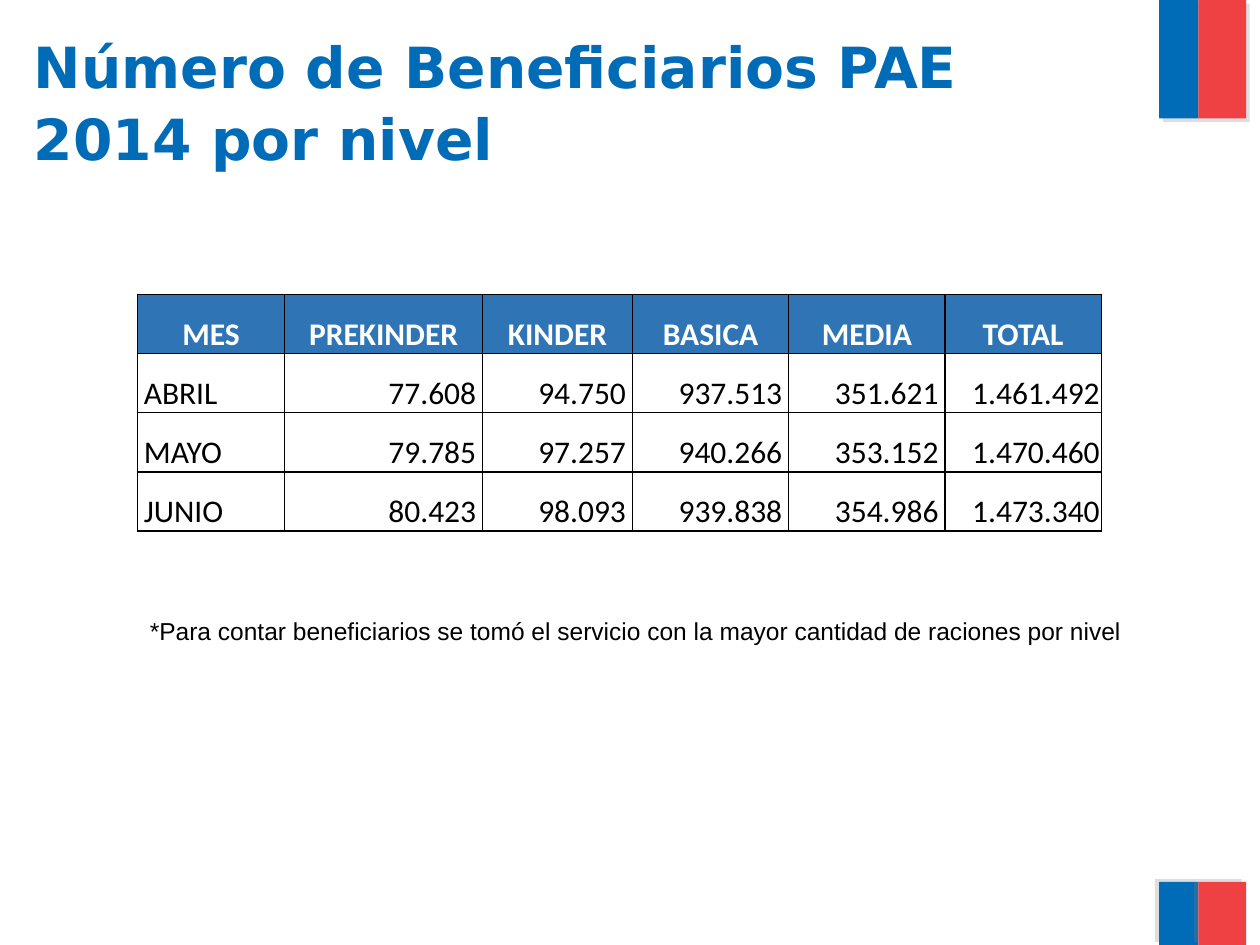
"""Build the slide with PAE beneficiaries by school level."""
from dataclasses import dataclass

from lxml.etree import SubElement
from pptx import Presentation
from pptx.dml.color import RGBColor as Rgb
from pptx.enum.shapes import MSO_SHAPE as Shape
from pptx.enum.text import MSO_ANCHOR as Anchor, MSO_AUTO_SIZE as AutoSize, PP_ALIGN as Align
from pptx.oxml import parse_xml
from pptx.oxml.ns import nsdecls, qn
from pptx.util import Cm, Pt


@dataclass(frozen=True)
class Theme:
    blue: str = "006CB7"
    red: str = "EF4144"
    header: str = "2F75B5"
    white: str = "FFFFFF"
    black: str = "000000"
    shadow: str = "808080"
    title_size: float = 32.4
    table_size: float = 18
    note_size: float = 14


theme = Theme()


def add_span(para, text, font, size, color, bold=False):
    span = para.add_run()
    span.text = text
    span.font.name = font
    span.font.size = Pt(size)
    span.font.bold = bold
    span.font.color.rgb = Rgb.from_string(color)


def add_borders(cell):
    properties = cell._tc.get_or_add_tcPr()
    for position, side in enumerate(("a:lnL", "a:lnR", "a:lnT", "a:lnB")):
        line = properties.makeelement(qn(side), {"w": str(Pt(1))})
        fill = SubElement(line, qn("a:solidFill"))
        SubElement(fill, qn("a:srgbClr"), val=theme.black)
        properties.insert(position, line)


deck = Presentation()
deck.slide_width, deck.slide_height = Cm(25.4), Cm(19.05)
page = deck.slides.add_slide(deck.slide_layouts[5])

for top, height, angle in ((0, 2.39, 45), (17.78, 1.27, 215)):
    for left, width, color in ((23.37, 0.79, theme.blue), (24.16, 0.96, theme.red)):
        band = page.shapes.add_shape(Shape.RECTANGLE, Cm(left), Cm(top), Cm(width), Cm(height))
        band.fill.solid()
        band.fill.fore_color.rgb = Rgb.from_string(color)
        band.line.fill.background()
        band.shadow.inherit = False
        band._element.spPr.remove(band._element.spPr.find(qn("a:effectLst")))
        band._element.spPr.append(parse_xml(
            f'<a:effectLst {nsdecls("a")}><a:outerShdw blurRad="0" dist="{Pt(3)}" '
            f'dir="{angle * 60000}" algn="ctr" rotWithShape="0"><a:srgbClr val="{theme.shadow}">'
            '<a:alpha val="25000"/></a:srgbClr></a:outerShdw></a:effectLst>'))

title = page.shapes.title
title.left, title.top, title.width, title.height = Cm(0.43), Cm(0.43), Cm(22.68), Cm(3.18)
title.text_frame.auto_size = AutoSize.NONE
title.text_frame.word_wrap = True
title.text_frame.vertical_anchor = Anchor.MIDDLE
para = title.text_frame.paragraphs[0]
para.alignment = Align.LEFT
para.line_spacing = 1.05
add_span(para, "Número de Beneficiarios PAE 2014 por nivel", "DejaVu Sans",
         theme.title_size, theme.blue, True)

rows = (
    ("MES", "PREKINDER", "KINDER", "BASICA", "MEDIA", "TOTAL"),
    ("ABRIL", "77.608", "94.750", "937.513", "351.621", "1.461.492"),
    ("MAYO", "79.785", "97.257", "940.266", "353.152", "1.470.460"),
    ("JUNIO", "80.423", "98.093", "939.838", "354.986", "1.473.340"),
)
widths = (2.97, 3.99, 3.02, 3.15, 3.15, 3.15)
row_height = 1.19
table = page.shapes.add_table(len(rows), len(widths), Cm(2.77), Cm(5.94),
                              Cm(sum(widths)), Cm(row_height * len(rows))).table
for column, width in zip(table.columns, widths):
    column.width = Cm(width)
for row_index, values in enumerate(rows):
    table.rows[row_index].height = Cm(row_height)
    is_header = row_index == 0
    for column_index, value in enumerate(values):
        cell = table.cell(row_index, column_index)
        is_total = not is_header and column_index == len(widths) - 1
        cell.margin_left = cell.margin_right = Cm(0.03 if is_total else 0.13)
        cell.margin_top = Cm(0.03 if is_total else 0)
        cell.margin_bottom = Cm(0)
        cell.vertical_anchor = Anchor.BOTTOM
        if is_header:
            cell.fill.solid()
            cell.fill.fore_color.rgb = Rgb.from_string(theme.header)
        else:
            cell.fill.background()
        add_borders(cell)
        para = cell.text_frame.paragraphs[0]
        para.alignment = Align.CENTER if is_header else Align.RIGHT if column_index else Align.LEFT
        add_span(para, value, "Calibri", theme.table_size,
                 theme.white if is_header else theme.black, is_header)

note = page.shapes.add_textbox(Cm(2.77), Cm(12.29), Cm(20.65), Cm(0.86))
note.text_frame.word_wrap = True
note.text_frame.auto_size = AutoSize.SHAPE_TO_FIT_TEXT
add_span(note.text_frame.paragraphs[0],
         "*Para contar beneficiarios se tomó el servicio con la mayor cantidad de raciones por nivel",
         "Arial", theme.note_size, theme.black)

deck.save("out.pptx")
